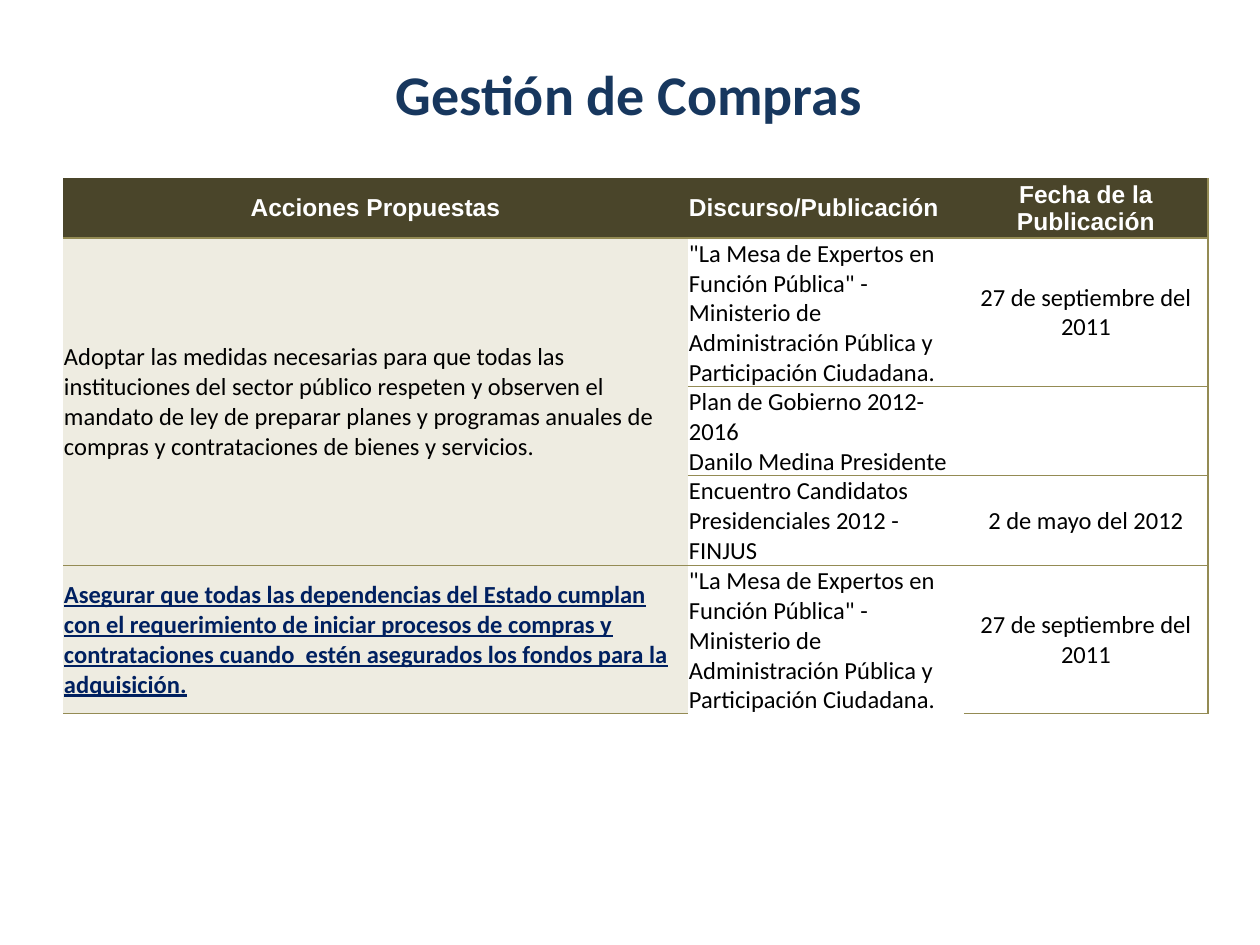
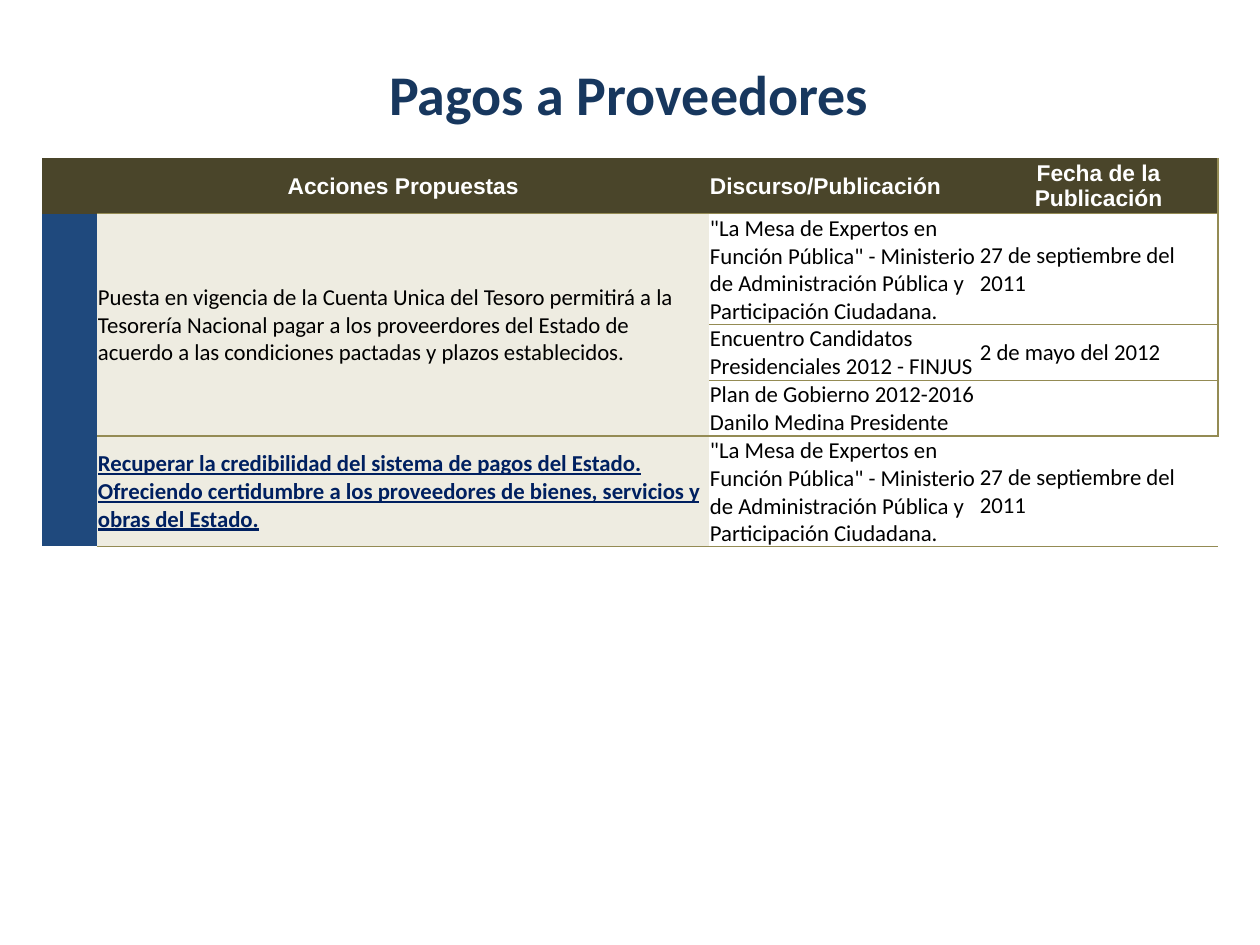
from lxml import etree
from pptx import Presentation
from pptx.dml.color import RGBColor
from pptx.enum.text import MSO_ANCHOR, MSO_AUTO_SIZE, PP_ALIGN
from pptx.oxml.ns import qn
from pptx.util import Emu, Pt

PX = 914400 / 126
CENTER, LEFT = PP_ALIGN.CENTER, PP_ALIGN.LEFT
MIDDLE = MSO_ANCHOR.MIDDLE
FIT_SHAPE = MSO_AUTO_SIZE.SHAPE_TO_FIT_TEXT
PLAIN_TABLE = "{2D5ABB26-0587-4C30-8999-92F81FD0307C}"

TITLE_BLUE = "17375E"
HEADER_BROWN = "4A452A"
BAND_BLUE = "1F497D"
ACTION_BEIGE = "EEECE1"
LINK_NAVY = "002060"
RULE_OLIVE = "948B54"
WHITE, BLACK = "FFFFFF", "000000"

HEADINGS = ["Acciones Propuestas", "Discurso/Publicación", "Fecha de la Publicación"]
EXPERTS = ['"La Mesa de Expertos en Función Pública" - Ministerio de Administración '
           "Pública y Participación Ciudadana.", "27 de septiembre del 2011"]
PLAN = ["Plan de Gobierno 2012-2016\nDanilo Medina Presidente", ""]
DEBATE = ["Encuentro Candidatos Presidenciales 2012 - FINJUS", "2 de mayo del 2012"]

PAGES = [
    dict(
        title="Gestión de Compras", left=63, top=178, size=14, band=0,
        widths=[625, 276, 244], heights=[60, 148, 89, 90, 148],
        date_align=CENTER, no_bottom=[(4, 1)], no_right=[],
        rows=[
            HEADINGS,
            ["Adoptar las medidas necesarias para que todas las instituciones del sector "
             "público respeten y observen el mandato de ley de preparar planes y programas "
             "anuales de compras y contrataciones de bienes y servicios.", *EXPERTS],
            ["", *PLAN],
            ["", *DEBATE],
            ["Asegurar que todas las dependencias del Estado cumplan con el requerimiento "
             "de iniciar procesos de compras y contrataciones cuando  estén asegurados los "
             "fondos para la adquisición.", *EXPERTS],
        ],
    ),
    dict(
        title="Pagos a Proveedores", left=42, top=158, size=13, band=1,
        widths=[55, 612, 270, 239], heights=[55, 110, 56, 56, 110],
        date_align=LEFT, no_bottom=[], no_right=[4],
        rows=[
            HEADINGS,
            ["Puesta en vigencia de la Cuenta Unica del Tesoro permitirá a la Tesorería "
             "Nacional pagar a los proveerdores del Estado de acuerdo a las condiciones "
             "pactadas y plazos establecidos.", *EXPERTS],
            ["", *DEBATE],
            ["", *PLAN],
            ["Recuperar la credibilidad del sistema de pagos del Estado. Ofreciendo "
             "certidumbre a los proveedores de bienes, servicios y obras del Estado.", *EXPERTS],
        ],
    ),
]


def px(length):
    return Emu(round(length * PX))


def color(hex_string):
    return RGBColor.from_string(hex_string)


deck = Presentation()
deck.slide_width, deck.slide_height = px(1260), px(945)

for content in PAGES:
    page = deck.slides.add_slide(deck.slide_layouts[6])
    box = page.shapes.add_textbox(px(246), px(53), px(766), px(81))
    box.text_frame.word_wrap = True
    box.text_frame.auto_size = FIT_SHAPE
    para = box.text_frame.paragraphs[0]
    para.text = content["title"]
    para.alignment = CENTER
    para.font.name, para.font.size, para.font.bold = "Calibri", Pt(32), True
    para.font.color.rgb = color(TITLE_BLUE)

    widths, heights, band = content["widths"], content["heights"], content["band"]
    table = page.shapes.add_table(
        len(heights), len(widths), px(content["left"]), px(content["top"]),
        px(sum(widths)), px(sum(heights))).table
    table._tbl.tblPr.find(qn("a:tableStyleId")).text = PLAIN_TABLE
    for column, width in zip(table.columns, widths):
        column.width = px(width)
    for row, height in zip(table.rows, heights):
        row.height = px(height)
    table.cell(1, band).merge(table.cell(3, band))

    for row_index, texts in enumerate(content["rows"]):
        for column_index, text in enumerate([""] * band + texts):
            cell = table.cell(row_index, column_index)
            role = column_index - band
            is_header = row_index == 0
            is_key_action = row_index == 4 and role == 0

            borders = {}
            if role == 2 and row_index not in content["no_right"]:
                borders["a:lnR"] = 1
            if role >= 0:
                if row_index > 0:
                    borders["a:lnT"] = 0.5 if row_index in (2, 3) and role else 1
                if (row_index, role) not in content["no_bottom"]:
                    borders["a:lnB"] = 0.5 if row_index in (1, 2) and role else 1
            for tag, weight in borders.items():
                line = etree.SubElement(cell._tc.get_or_add_tcPr(), qn(tag), w=str(Pt(weight)))
                line_fill = etree.SubElement(line, qn("a:solidFill"))
                etree.SubElement(line_fill, qn("a:srgbClr"), val=RULE_OLIVE)

            if is_header:
                fill = HEADER_BROWN
            else:
                fill = BAND_BLUE if role < 0 else ACTION_BEIGE if role == 0 else WHITE
            cell.fill.solid()
            cell.fill.fore_color.rgb = color(fill)
            cell.vertical_anchor = MIDDLE
            cell.margin_left = cell.margin_right = cell.margin_top = px(1)
            cell.margin_bottom = 0

            para = cell.text_frame.paragraphs[0]
            para.text = text
            if role == 2:
                para.alignment = CENTER if is_header else content["date_align"]
            else:
                para.alignment = CENTER if is_header and role == 0 else LEFT
            font = para.font
            font.name = "Arial" if is_header else "Calibri"
            font.size = Pt(content["size"])
            font.bold = is_header or is_key_action
            font.underline = is_key_action
            font.color.rgb = color(WHITE if is_header else LINK_NAVY if is_key_action else BLACK)

deck.save("out.pptx")
